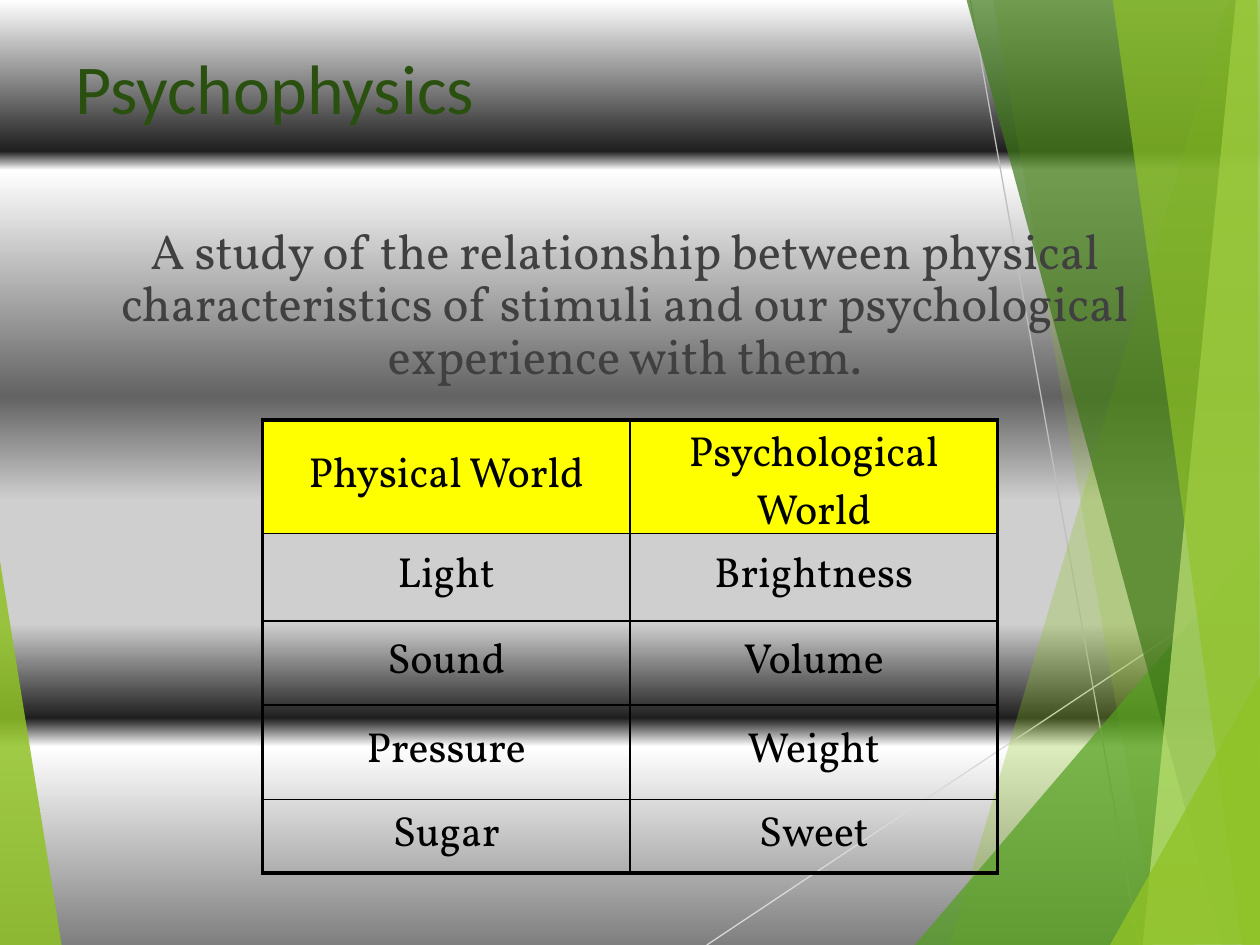
from dataclasses import dataclass

from lxml.etree import SubElement
from pptx import Presentation
from pptx.dml.color import RGBColor
from pptx.enum.shapes import MSO_CONNECTOR
from pptx.enum.text import MSO_ANCHOR, PP_ALIGN
from pptx.oxml.ns import qn
from pptx.util import Pt


@dataclass(frozen=True)
class Theme:
    title_font: str = "Calibri"
    text_font: str = "Vollkorn"
    title_size: int = 40
    body_size: int = 28
    table_size: int = 24
    title: str = "2A5010"
    body: str = "404040"
    black: str = "000000"
    header: str = "FFFF00"
    lime: str = "90C226"
    green: str = "54A021"
    forest: str = "3F7819"
    pale: str = "C0E474"
    light_line: str = "D9D9D9"
    dark_line: str = "BFBFBF"
    backdrop: tuple = (
        (0, "FFFFFF"), (16, "1F1F1F"), (18, "FFFFFF"), (42, "636363"), (53, "CFCFCF"),
        (66, "CFCFCF"), (76, "1F1F1F"), (79, "FFFFFF"), (100, "7F7F7F"),
    )


theme = Theme()


def add_text(paragraph, text, font, size, color):
    run = paragraph.add_run()
    run.text = text
    run.font.name = font
    run.font.size = Pt(size)
    run.font.color.rgb = RGBColor.from_string(color)


def add_border(cell, side, width):
    line = SubElement(cell._tc.get_or_add_tcPr(), qn(f"a:ln{side}"), w=str(Pt(width)))
    SubElement(SubElement(line, qn("a:solidFill")), qn("a:srgbClr"), val=theme.black)


prs = Presentation()
prs.slide_width, prs.slide_height = Pt(720), Pt(540)
slide = prs.slides.add_slide(prs.slide_layouts[5])

# Background: banded vertical gradient
backdrop = slide.background.fill
backdrop.gradient()
backdrop.gradient_angle = 270
stops = next(slide._element.iter(qn("a:gsLst")))
for stop in list(stops):
    stops.remove(stop)
for percent, color in theme.backdrop:
    stop = SubElement(stops, qn("a:gs"), pos=str(percent * 1000))
    SubElement(stop, qn("a:srgbClr"), val=color)

# Thin crossing rays
for x1, y1, x2, y2, color in (
    (403.9, 540, 720.7, 329, theme.light_line),
    (554.4, 0, 650.9, 540, theme.dark_line),
):
    ray = slide.shapes.add_connector(MSO_CONNECTOR.STRAIGHT, Pt(x1), Pt(y1), Pt(x2), Pt(y2))
    ray.line.color.rgb = RGBColor.from_string(color)
    ray.line.width = Pt(0.75)
    SubElement(ray._element.spPr, qn("a:effectLst"))

# Translucent facets: colour, opacity in percent, corners
facets = (
    (theme.lime, 85, [(-0.7, 316), (35.3, 540.5), (-0.7, 540)]),
    (theme.lime, 30, [(702, 0), (542.9, 540), (721.2, 540.5), (720.7, 0.5)]),
    (theme.lime, 20, [(567.4, -0.5), (661.7, 540), (720.5, 540), (720.5, -0.5)]),
    (theme.green, 72, [(522.7, 540), (720, 308.9), (720.7, 540)]),
    (theme.forest, 70, [(552.2, -0.5), (698.4, 540), (720.7, 539.5), (720.7, -0.5)]),
    (theme.pale, 70, [(706.3, -0.5), (653, 540), (720.7, 540), (720, -0.5)]),
    (theme.lime, 65, [(635.8, -0.5), (709.9, 540), (720, 540), (718.6, -0.5)]),
    (theme.lime, 80, [(634.3, 540), (720.7, 385.2), (720.7, 539.5)]),
)
for color, opacity, corners in facets:
    first, *rest = [(Pt(x), Pt(y)) for x, y in corners]
    outline = slide.shapes.build_freeform(*first)
    outline.add_line_segments(rest, close=True)
    facet = outline.convert_to_shape()
    facet.shadow.inherit = False
    facet.line.fill.background()
    facet.fill.solid()
    facet.fill.fore_color.rgb = RGBColor.from_string(color)
    tint = facet._element.spPr.find(qn("a:solidFill")).find(qn("a:srgbClr"))
    SubElement(tint, qn("a:alpha"), val=str(opacity * 1000))

# Title, brought in front of the facets
title = slide.shapes.title
title.left, title.top, title.width, title.height = Pt(36), Pt(21.6), Pt(648), Pt(90)
title.text_frame.vertical_anchor = MSO_ANCHOR.TOP
heading = title.text_frame.paragraphs[0]
heading.alignment = PP_ALIGN.LEFT
add_text(heading, "Psychophysics", theme.title_font, theme.title_size, theme.title)
slide.shapes._spTree.append(title._element)

# Definition
definition = slide.shapes.add_textbox(Pt(54), Pt(126), Pt(606), Pt(102)).text_frame
definition.word_wrap = True
sentence = definition.paragraphs[0]
sentence.alignment = PP_ALIGN.CENTER
sentence.line_spacing = 0.9
sentence.space_before = Pt(10)
add_text(
    sentence,
    "A study of the relationship between physical characteristics of stimuli "
    "and our psychological experience with them.",
    theme.text_font, theme.body_size, theme.body,
)

# Table of physical and psychological counterparts
pairs = (
    ("Physical World", "Psychological World"),
    ("Light", "Brightness"),
    ("Sound", "Volume"),
    ("Pressure", "Weight"),
    ("Sugar", "Sweet"),
)
row_heights = (60, 50, 48, 54, 42)
worlds = slide.shapes.add_table(
    len(pairs), 2, Pt(150), Pt(240), Pt(420), Pt(sum(row_heights))
).table
worlds.first_row = worlds.horz_banding = False
last = len(pairs) - 1
for r, (pair, height) in enumerate(zip(pairs, row_heights)):
    worlds.rows[r].height = Pt(height)
    for c, word in enumerate(pair):
        cell = worlds.cell(r, c)
        cell.vertical_anchor = MSO_ANCHOR.MIDDLE
        for side, outer in (("L", c == 0), ("R", c == 1), ("T", r == 0), ("B", r == last)):
            add_border(cell, side, 2.25 if outer else 1)
        if r == 0:
            cell.fill.solid()
            cell.fill.fore_color.rgb = RGBColor.from_string(theme.header)
        else:
            cell.fill.background()
        entry = cell.text_frame.paragraphs[0]
        entry.alignment = PP_ALIGN.CENTER
        entry.space_before = Pt(4.8)
        add_text(entry, word, theme.text_font, theme.table_size, theme.black)

prs.save("out.pptx")
